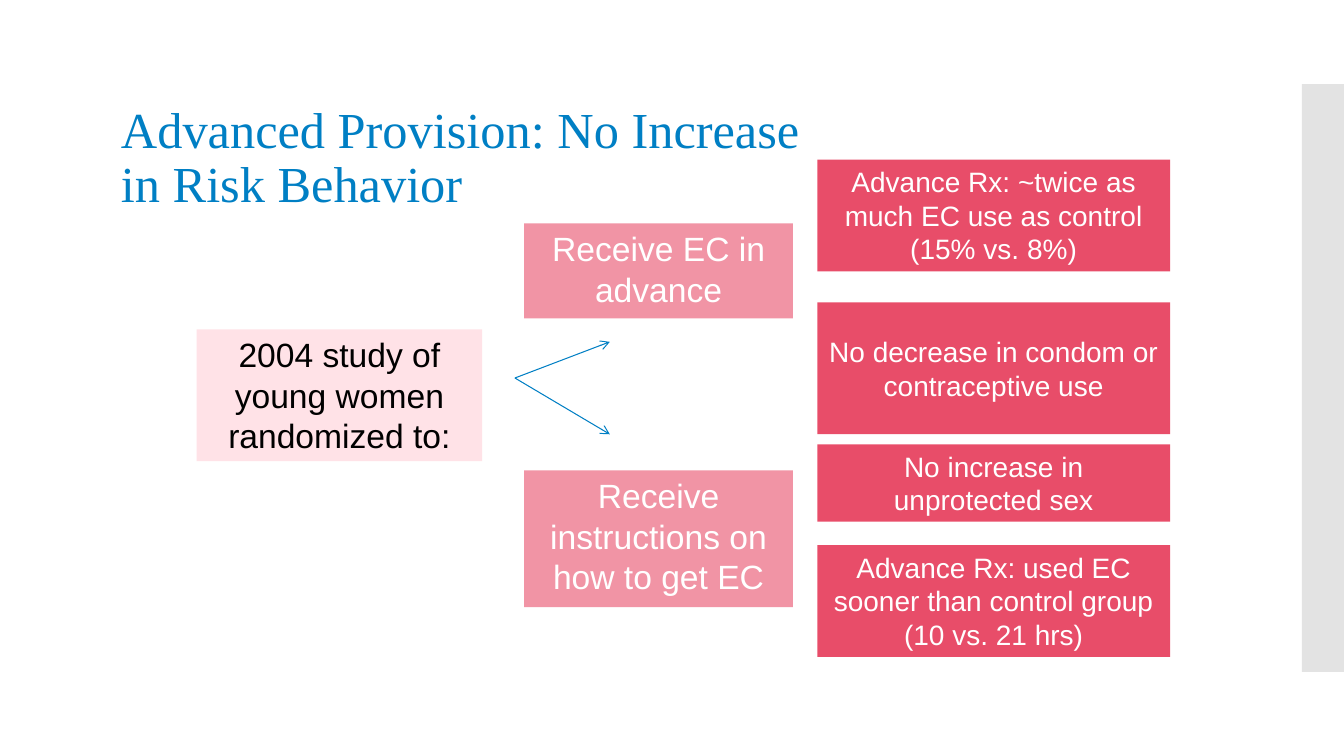
import pptx
import pptx.util
import pptx.dml.color
import pptx.enum.shapes
import pptx.enum.text
import pptx.oxml
import pptx.oxml.ns
from lxml import etree

THEME = {
    "title": "007FC4", "arrow": "007FC4", "sidebar": "C8C8C8",
    "study": "FFE2E7", "arm": "F194A5", "outcome": "E84D69",
    "dark": "000000", "light": "FFFFFF",
    "title_font": "Times New Roman", "body_font": "Arial",
    "title_size": 36, "group_size": 24, "outcome_size": 20,
}
CELL = pptx.util.Inches(1 / 12)  # grid of 160 columns by 90 rows
ALIGN = pptx.enum.text.PP_ALIGN
ANCHOR = pptx.enum.text.MSO_ANCHOR
RECTANGLE = pptx.enum.shapes.MSO_SHAPE.RECTANGLE


def grid(*cells):
    return [round(cell * CELL) for cell in cells]


def write(frame, text, *, size, color, font=THEME["body_font"],
          align=ALIGN.CENTER, anchor=ANCHOR.TOP, spacing=1.0):
    frame.word_wrap = True
    frame.auto_size = pptx.enum.text.MSO_AUTO_SIZE.NONE
    frame.vertical_anchor = anchor
    paragraph = frame.paragraphs[0]
    paragraph.alignment = align
    paragraph.line_spacing = spacing
    for number, line in enumerate(text.split("\n")):
        if number:
            paragraph.add_line_break()
        run = paragraph.add_run()
        run.text = line
        run.font.name = font
        run.font.size = pptx.util.Pt(size)
        run.font.color.rgb = pptx.dml.color.RGBColor.from_string(color)


deck = pptx.Presentation()
deck.slide_width, deck.slide_height = grid(160, 90)
slide = deck.slides.add_slide(deck.slide_layouts[5])

# Sidebar
sidebar = slide.shapes.add_shape(RECTANGLE, *grid(155, 10, 5, 70))
sidebar.shadow.inherit = False
sidebar.line.fill.background()
sidebar.fill.solid()
sidebar.fill.fore_color.rgb = pptx.dml.color.RGBColor.from_string(THEME["sidebar"])
sidebar_color = sidebar.fill._xPr.find(".//" + pptx.oxml.ns.qn("a:srgbClr"))
etree.SubElement(sidebar_color, pptx.oxml.ns.qn("a:alpha"), val="50000")

# Title
title = slide.shapes.title
title.left, title.top, title.width, title.height = grid(13.2, 11.9, 88.4, 17)
write(title.text_frame, "Advanced Provision: No Increase\nin Risk Behavior",
      size=THEME["title_size"], color=THEME["title"], font=THEME["title_font"],
      align=ALIGN.LEFT, spacing=0.9)

# Study, its two arms and the outcomes: one column each, with (top, height, text)
columns = [
    (23.4, 34, "study", "dark", "group_size", [
        (39.2, 15.7, "2004 study of young women randomized to:")]),
    (62.4, 32, "arm", "light", "group_size", [
        (26.6, 11.3, "Receive EC in advance"),
        (56, 16.3, "Receive instructions on how to get EC")]),
    (97.3, 42, "outcome", "light", "outcome_size", [
        (19, 13.3, "Advance Rx: ~twice as much EC use as control (15% vs. 8%)"),
        (36, 15.7, "No decrease in condom or contraceptive use"),
        (52.9, 9.2, "No increase in unprotected sex"),
        (64.9, 13.3, "Advance Rx: used EC sooner than control group (10 vs. 21 hrs)")]),
]
for left, width, fill, ink, size, entries in columns:
    for top, height, text in entries:
        box = slide.shapes.add_shape(RECTANGLE, *grid(left, top, width, height))
        box.shadow.inherit = False
        box.line.fill.background()
        box.fill.solid()
        box.fill.fore_color.rgb = pptx.dml.color.RGBColor.from_string(THEME[fill])
        write(box.text_frame, text, size=THEME[size], color=THEME[ink],
              anchor=ANCHOR.MIDDLE if top == 36 else ANCHOR.TOP)

# Arrows from the study to its arms
for arm_row in (40.7, 51.7):
    arrow = slide.shapes.add_connector(
        pptx.enum.shapes.MSO_CONNECTOR.STRAIGHT, *grid(61.3, 45, 72.6, arm_row))
    arrow.line.width = pptx.util.Pt(0.75)
    arrow.line.color.rgb = pptx.dml.color.RGBColor.from_string(THEME["arrow"])
    etree.SubElement(arrow.line._get_or_add_ln(), pptx.oxml.ns.qn("a:tailEnd"), type="arrow")
    etree.SubElement(arrow._element.spPr, pptx.oxml.ns.qn("a:effectLst"))

deck.save("out.pptx")
